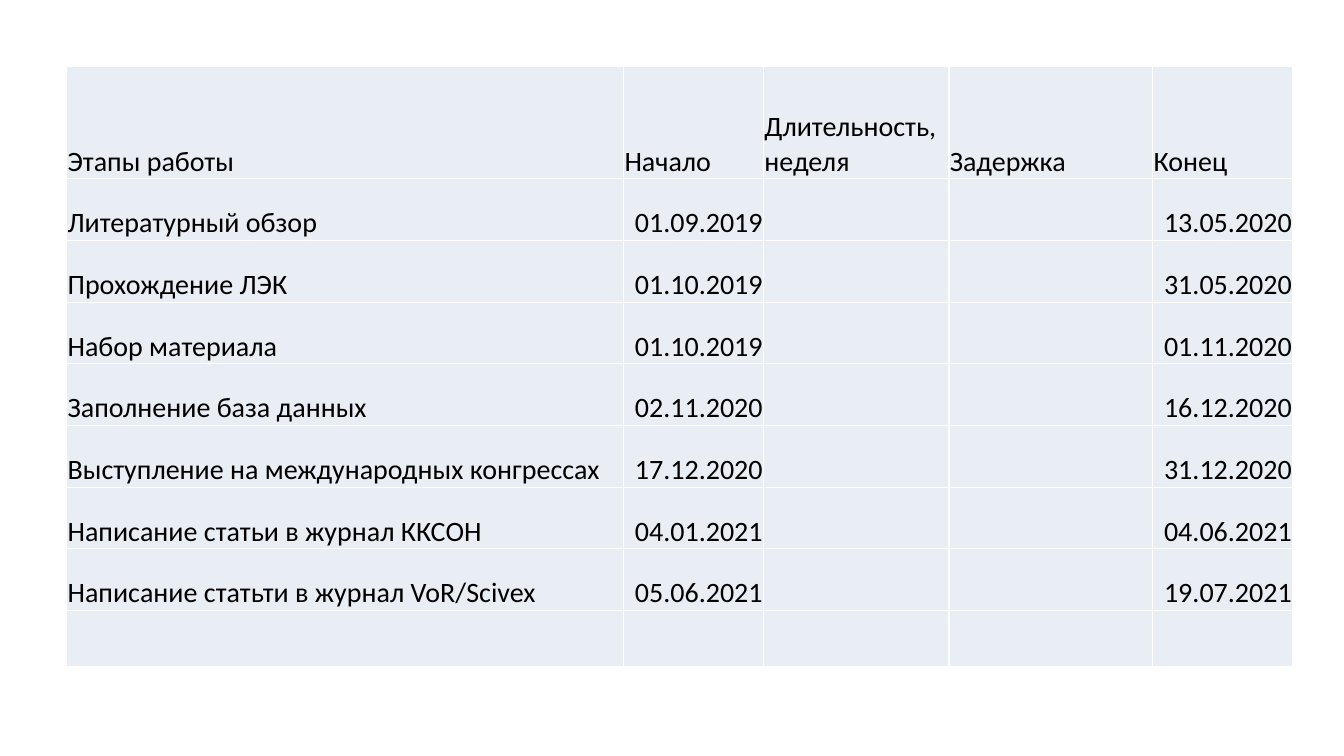
import pptx
import pptx.dml.color
import pptx.enum.text
import pptx.oxml
import pptx.oxml.ns
import pptx.util
from dataclasses import dataclass

Pt = pptx.util.Pt
Align = pptx.enum.text.PP_ALIGN


@dataclass(frozen=True)
class Theme:
    font: str = "Calibri"
    size: float = 20
    text: str = "000000"
    cell: str = "E9EDF4"
    border: str = "FFFFFF"
    border_width: float = 1


THEME = Theme()
HEADERS = ("Этапы работы", "Начало", "Длительность, неделя", "Задержка", "Конец")
STAGES = (
    ("Литературный обзор", "01.09.2019", "13.05.2020"),
    ("Прохождение ЛЭК", "01.10.2019", "31.05.2020"),
    ("Набор материала", "01.10.2019", "01.11.2020"),
    ("Заполнение база данных", "02.11.2020", "16.12.2020"),
    ("Выступление на международных конгрессах", "17.12.2020", "31.12.2020"),
    ("Написание статьи в журнал ККСОН", "04.01.2021", "04.06.2021"),
    ("Написание статьти в журнал VoR/Scivex", "05.06.2021", "19.07.2021"),
)
COLUMN_SHARES = (397.8, 100, 132.4, 145.6, 100)
ROW_SHARES = (80, *[44.06] * len(STAGES), 40.4)


def color(value):
    return pptx.dml.color.RGBColor.from_string(value)


def write_text(cell, text, size=THEME.size, fill=THEME.text, align=Align.LEFT):
    cell.vertical_anchor = pptx.enum.text.MSO_ANCHOR.BOTTOM
    cell.margin_left = cell.margin_top = cell.margin_right = Pt(0.6)
    cell.margin_bottom = 0
    paragraph = cell.text_frame.paragraphs[0]
    paragraph.alignment = align
    run = paragraph.add_run()
    run.text = text
    run.font.name = THEME.font
    run.font.size = Pt(size)
    run.font.bold = False
    run.font.color.rgb = color(fill)


def style_cell(cell):
    cell.fill.solid()
    cell.fill.fore_color.rgb = color(THEME.cell)
    properties = cell._tc.get_or_add_tcPr()
    for index, side in enumerate(("lnL", "lnR", "lnT", "lnB")):
        properties.insert(index, pptx.oxml.parse_xml(
            f'<a:{side} {pptx.oxml.ns.nsdecls("a")} w="{Pt(THEME.border_width)}">'
            f'<a:solidFill><a:srgbClr val="{THEME.border}"/></a:solidFill></a:{side}>'))


def add_schedule(slide, left, top, width, height):
    rows = [HEADERS]
    rows += [(stage, start, "", "", end) for stage, start, end in STAGES]
    rows.append([""] * len(HEADERS))
    table = slide.shapes.add_table(
        len(rows), len(HEADERS), Pt(left), Pt(top), Pt(width), Pt(height)).table
    table.first_row = False
    table.horz_banding = False
    for column, share in zip(table.columns, COLUMN_SHARES):
        column.width = Pt(width * share / sum(COLUMN_SHARES))
    for row, share in zip(table.rows, ROW_SHARES):
        row.height = Pt(height * share / sum(ROW_SHARES))
    for row_index, values in enumerate(rows):
        for column_index, text in enumerate(values):
            cell = table.cell(row_index, column_index)
            style_cell(cell)
            if text:
                is_date = row_index > 0 and column_index > 0
                write_text(cell, text, align=Align.RIGHT if is_date else Align.LEFT)


def main():
    presentation = pptx.Presentation()
    presentation.slide_width = Pt(960)
    presentation.slide_height = Pt(540)
    slide = presentation.slides.add_slide(presentation.slide_layouts[6])
    add_schedule(slide, left=47.7, top=47.7, width=875.8, height=428.8)
    presentation.save("out.pptx")


if __name__ == "__main__":
    main()
